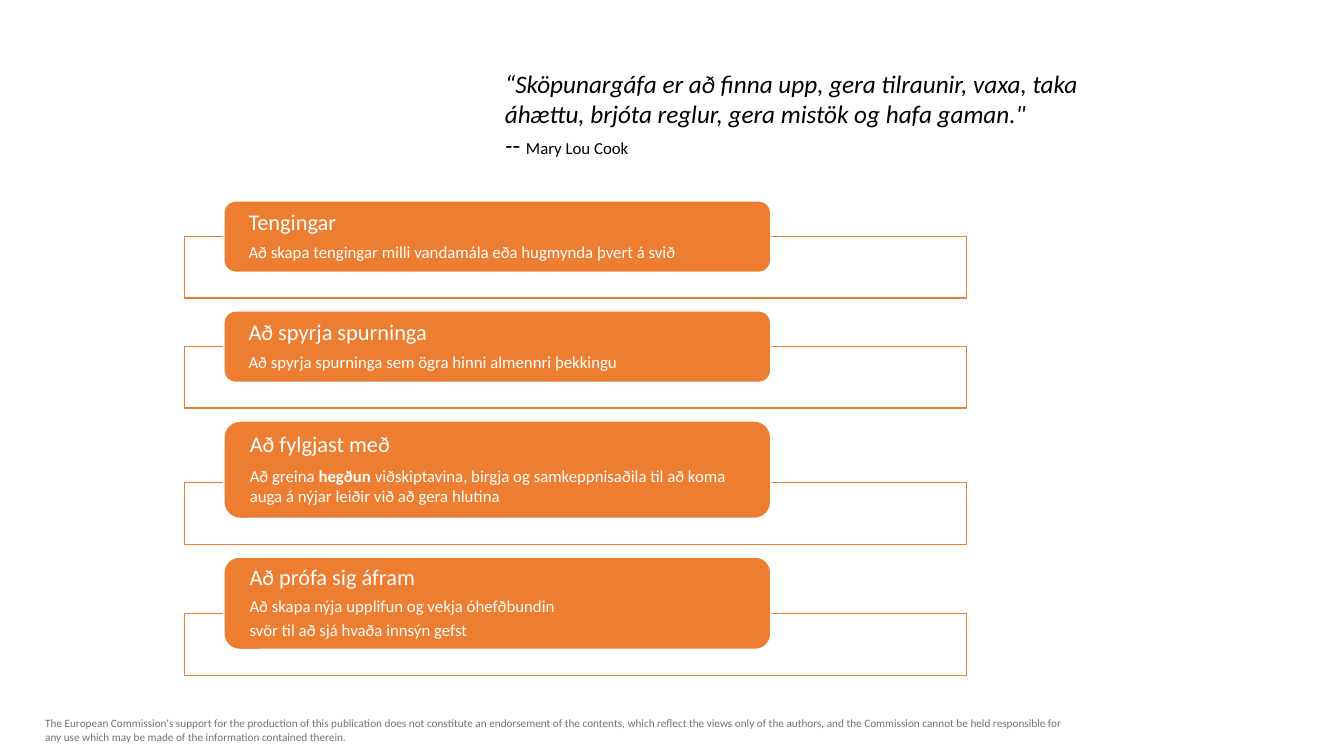
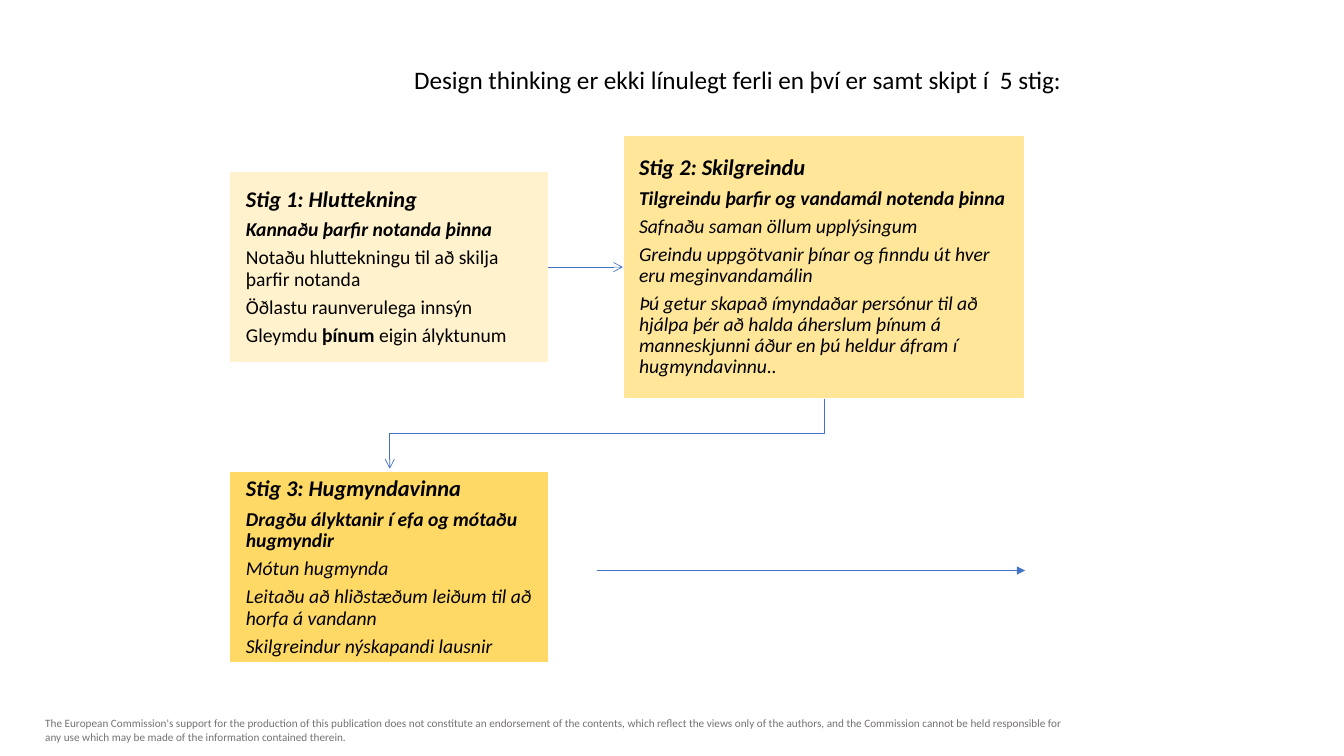
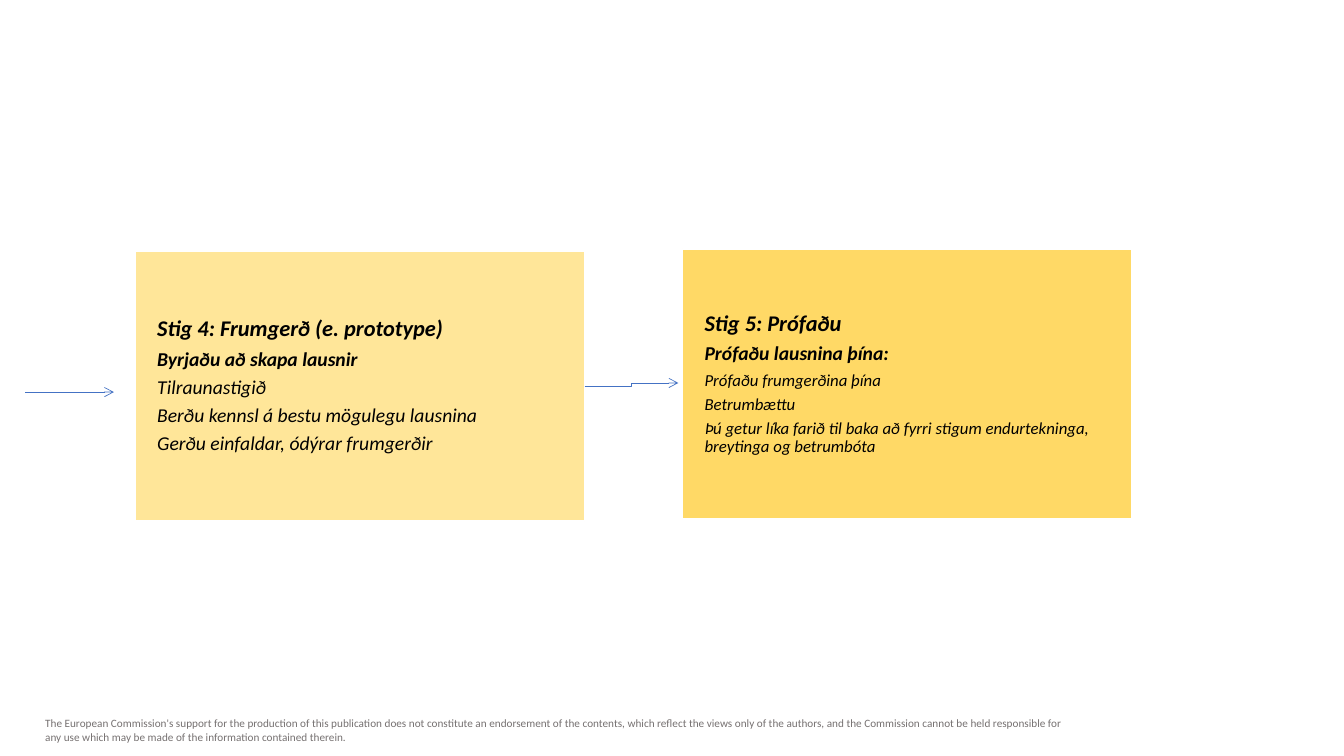
from dataclasses import dataclass
from typing import NamedTuple

from lxml.etree import SubElement
from pptx import Presentation
from pptx.dml.color import RGBColor
from pptx.enum.shapes import MSO_CONNECTOR as Connector, MSO_SHAPE as Shape
from pptx.enum.text import MSO_ANCHOR as Anchor, PP_ALIGN as Align
from pptx.oxml.ns import qn
from pptx.util import Emu, Inches, Pt

COLUMNS, ROWS = 80, 45
CELL = Inches(7.5) / ROWS


@dataclass(frozen=True)
class Theme:
    font: str = "Calibri"
    black: str = "000000"
    white: str = "FFFFFF"
    grey: str = "767171"
    orange: str = "ED7D31"
    blue: str = "4472C4"
    cream: str = "FFF2CC"
    sand: str = "FFE699"
    gold: str = "FFD966"
    title: int = 18
    heading: int = 16
    body: int = 14
    small: int = 12
    footer: int = 8
    tight: float = 0.9
    space_after: float = 0.35


THEME = Theme()

FOOTER = (
    "The European Commission's support for the production of this publication does not "
    "constitute an endorsement of the contents, which reflect the views only of the authors, "
    "and the Commission cannot be held responsible for any use which may be made of the "
    "information contained therein."
)


class Box(NamedTuple):
    """Left, top, width and height in grid cells."""
    left: float
    top: float
    width: float
    height: float


class Card(NamedTuple):
    heading: str
    lines: tuple[str, ...]
    height: float
    line_spacing: float = THEME.tight


class Stage(NamedTuple):
    box: Box
    fill: str
    heading: str
    subheading: str
    details: tuple[str, ...]
    detail_size: int = THEME.body
    detail_italic: bool = True
    inset: tuple[float, float] = (0.96, 0.96)


CARD_LEFT, CARD_TOP, CARD_WIDTH, CARD_GAP = 13.33, 11.96, 32.55, 2.3
OUTLINE_LEFT, OUTLINE_WIDTH, OUTLINE_HEIGHT, OUTLINE_OVERLAP = 11, 46.55, 3.67, 2.13
CARDS = (
    Card("Tengingar", ("Að skapa tengingar milli vandamála eða hugmynda þvert á svið",), 4.25),
    Card("Að spyrja spurninga", ("Að spyrja spurninga sem ögra hinni almennri þekkingu",), 4.25),
    Card("Að fylgjast með",
         ("Að greina *hegðun* viðskiptavina, birgja og samkeppnisaðila til að koma "
          "auga á nýjar leiðir við að gera hlutina",), 5.8, 1.0),
    Card("Að prófa sig áfram",
         ("Að skapa nýja upplifun og vekja óhefðbundin",
          "svör til að sjá hvaða innsýn gefst"), 5.5),
)

EMPATHISE = Stage(
    Box(13.68, 10.2, 18.96, 11.4), THEME.cream,
    "Stig 1: Hluttekning", "Kannaðu þarfir notanda þinna",
    ("Notaðu hluttekningu til að skilja þarfir notanda",
     "Öðlastu raunverulega innsýn",
     "Gleymdu *þínum* eigin ályktunum"),
    detail_italic=False)
DEFINE = Stage(
    Box(37.08, 8.07, 23.94, 15.66), THEME.sand,
    "Stig 2: Skilgreindu", "Tilgreindu þarfir og vandamál notenda þinna",
    ("Safnaðu saman öllum upplýsingum",
     "Greindu uppgötvanir þínar og finndu út hver eru meginvandamálin",
     "Þú getur skapað ímyndaðar persónur til að hjálpa þér að halda áherslum þínum á "
     "manneskjunni áður en þú heldur áfram í hugmyndavinnu.."))
IDEATE = Stage(
    Box(13.68, 28.08, 18.96, 11.4), THEME.gold,
    "Stig 3: Hugmyndavinna", "Dragðu ályktanir í efa og mótaðu hugmyndir",
    ("Mótun hugmynda",
     "Leitaðu að hliðstæðum leiðum til að horfa á vandann",
     "Skilgreindur nýskapandi lausnir"))
PROTOTYPE = Stage(
    Box(8.04, 14.94, 26.76, 16.08), THEME.sand,
    "Stig 4: Frumgerð (e. prototype)", "Byrjaðu að skapa lausnir",
    ("Tilraunastigið",
     "Berðu kennsl á bestu mögulegu lausnina",
     "Gerðu einfaldar, ódýrar frumgerðir"),
    inset=(1.32, 1.38))
TEST = Stage(
    Box(40.62, 14.82, 26.76, 16.08), THEME.gold,
    "Stig 5: Prófaðu", "Prófaðu lausnina þína:",
    ("Prófaðu frumgerðina þína",
     "Betrumbættu",
     "Þú getur líka farið til baka að fyrri stigum endurtekninga, breytinga og betrumbóta"),
    detail_size=THEME.small, inset=(1.32, 1.38))


def cells(*counts: float) -> list[Emu]:
    return [Emu(round(count * CELL)) for count in counts]


def write(frame, text: str, *, size: int, color: str = THEME.black, bold: bool = False,
          italic: bool = False, spacing: float = 1.0, after: float = 0,
          same_line: bool = False) -> None:
    """Add a paragraph, or continue the last one; *asterisks* mark bold words."""
    paragraph = frame.paragraphs[-1]
    if paragraph.runs and not same_line:
        paragraph = frame.add_paragraph()
    paragraph.alignment = Align.LEFT
    paragraph.line_spacing = spacing
    paragraph.space_after = Pt(size * after)
    for index, part in enumerate(text.split("*")):
        run = paragraph.add_run()
        run.text = part
        font = run.font
        font.name, font.size = THEME.font, Pt(size)
        font.bold, font.italic = bold or index % 2 == 1, italic
        font.color.rgb = RGBColor.from_string(color)


def add_text_frame(slide, box: Box):
    frame = slide.shapes.add_textbox(*cells(*box)).text_frame
    frame.word_wrap = True
    return frame


def add_panel(slide, kind: Shape, box: Box, fill: str, line: str,
              inset: tuple[float, float] = (0, 0)):
    shape = slide.shapes.add_shape(kind, *cells(*box))
    shape.shadow.inherit = False
    shape.fill.solid()
    shape.fill.fore_color.rgb = RGBColor.from_string(fill)
    shape.line.color.rgb = RGBColor.from_string(line)
    shape.line.width = Pt(1)
    frame = shape.text_frame
    frame.word_wrap = True
    frame.vertical_anchor = Anchor.MIDDLE
    frame.margin_left = frame.margin_right = cells(inset[0])[0]
    frame.margin_top = frame.margin_bottom = cells(inset[1])[0]
    return shape


def add_arrow(slide, start: tuple[float, float], end: tuple[float, float], *,
              kind: Connector = Connector.STRAIGHT, head: str = "arrow"):
    connector = slide.shapes.add_connector(kind, *cells(*start, *end))
    connector.line.color.rgb = RGBColor.from_string(THEME.blue)
    connector.line.width = Pt(0.5)
    properties = connector._element.spPr
    SubElement(properties.find(qn("a:ln")), qn("a:tailEnd"), type=head)
    SubElement(properties, qn("a:effectLst"))
    return connector


def add_falling_elbow(slide, start: tuple[float, float], end: tuple[float, float]) -> None:
    """Draw an elbow down and to the left: a sideways elbow turned a quarter."""
    middle_x, middle_y = (start[0] + end[0]) / 2, (start[1] + end[1]) / 2
    run, rise = (end[1] - start[1]) / 2, (start[0] - end[0]) / 2
    connector = add_arrow(slide, (middle_x - run, middle_y - rise),
                          (middle_x + run, middle_y + rise), kind=Connector.ELBOW)
    connector._element.spPr.find(qn("a:xfrm")).set("rot", str(90 * 60000))


def add_stage(slide, stage: Stage):
    shape = add_panel(slide, Shape.RECTANGLE, stage.box, stage.fill, THEME.white, stage.inset)
    frame = shape.text_frame
    layout = {"spacing": THEME.tight, "after": THEME.space_after}
    write(frame, stage.heading, size=THEME.heading, bold=True, italic=True, **layout)
    write(frame, stage.subheading, size=THEME.body, bold=True, italic=True, **layout)
    for detail in stage.details:
        write(frame, detail, size=stage.detail_size, italic=stage.detail_italic, **layout)
    return shape


def add_card(slide, card: Card, top: float) -> None:
    outline_top = top + card.height - OUTLINE_OVERLAP
    add_panel(slide, Shape.RECTANGLE,
              Box(OUTLINE_LEFT, outline_top, OUTLINE_WIDTH, OUTLINE_HEIGHT),
              THEME.white, THEME.orange)
    shape = add_panel(slide, Shape.ROUNDED_RECTANGLE,
                      Box(CARD_LEFT, top, CARD_WIDTH, card.height),
                      THEME.orange, THEME.white, (1.26, 0))
    write(shape.text_frame, card.heading, size=THEME.heading, color=THEME.white,
          spacing=THEME.tight, after=THEME.space_after)
    for line in card.lines:
        write(shape.text_frame, line, size=THEME.small, color=THEME.white,
              spacing=card.line_spacing, after=THEME.space_after)


def add_slide(presentation):
    slide = presentation.slides.add_slide(presentation.slide_layouts[6])
    write(add_text_frame(slide, Box(2.1, 42.36, 62.76, 2.22)), FOOTER,
          size=THEME.footer, color=THEME.grey)
    return slide


def build_creativity(presentation) -> None:
    slide = add_slide(presentation)
    quote = add_text_frame(slide, Box(29.46, 3.78, 38.46, 7.86))
    write(quote, "“Sköpunargáfa er að finna upp, gera tilraunir, vaxa, taka áhættu, "
                 "brjóta reglur, gera mistök og hafa gaman.\"", size=THEME.title, italic=True)
    write(quote, "-", size=THEME.title, italic=True)
    write(quote, "- ", size=THEME.title, same_line=True)
    write(quote, "Mary Lou Cook", size=THEME.small, same_line=True)
    top = CARD_TOP
    for card in CARDS:
        add_card(slide, card, top)
        top += card.height + CARD_GAP


def build_first_stages(presentation) -> None:
    slide = add_slide(presentation)
    write(add_text_frame(slide, Box(24.06, 3.54, 46.8, 2.4)),
          "Design thinking er ekki línulegt ferli en því er samt skipt í  5 stig:",
          size=THEME.title)
    empathise, define, _ = [add_stage(slide, stage) for stage in (EMPATHISE, DEFINE, IDEATE)]
    arrow = add_arrow(slide, (32.64, 15.9), (37.08, 15.9))
    arrow.begin_connect(empathise, 3)
    arrow.end_connect(define, 1)
    add_falling_elbow(slide, (49.05, 23.73), (23.2, 27.9))
    add_arrow(slide, (35.52, 33.96), (61.02, 33.96), head="triangle")


def build_last_stages(presentation) -> None:
    slide = add_slide(presentation)
    for stage in (PROTOTYPE, TEST):
        add_stage(slide, stage)
    add_arrow(slide, (1.5, 23.34), (6.78, 23.34))
    add_arrow(slide, (34.8, 22.98), (40.38, 22.8), kind=Connector.ELBOW)


def main() -> None:
    presentation = Presentation()
    presentation.slide_width, presentation.slide_height = cells(COLUMNS, ROWS)
    build_creativity(presentation)
    build_first_stages(presentation)
    build_last_stages(presentation)
    presentation.save("out.pptx")


if __name__ == "__main__":
    main()
